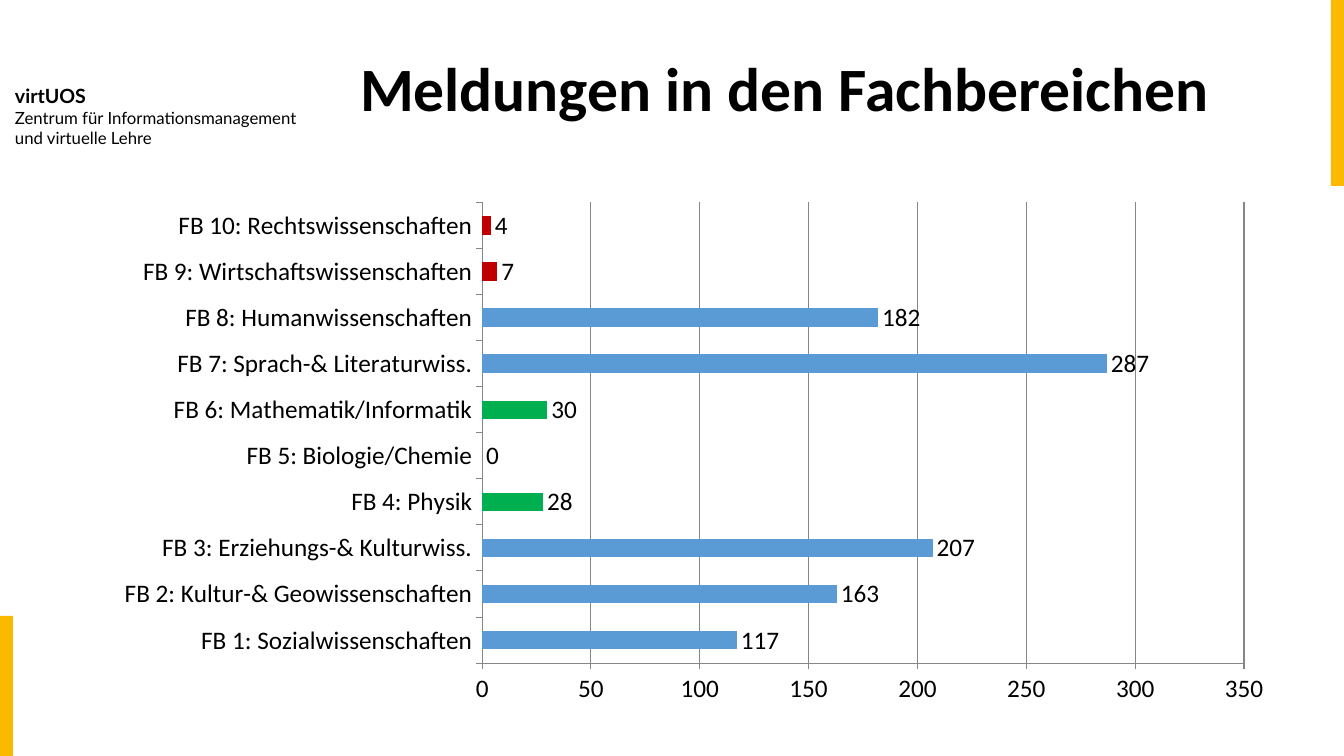
from lxml import etree
from pptx import Presentation
from pptx.chart.data import CategoryChartData
from pptx.dml.color import RGBColor
from pptx.enum.chart import XL_CHART_TYPE as ChartType
from pptx.enum.chart import XL_LABEL_POSITION as LabelPosition
from pptx.enum.chart import XL_TICK_MARK as TickMark
from pptx.enum.shapes import MSO_SHAPE as ShapeType
from pptx.enum.text import MSO_ANCHOR as Anchor
from pptx.enum.text import PP_ALIGN as Align
from pptx.util import Pt

EMU_PER_PX = 914400 / 100.8
COLORS = {
    "accent": "FBB900",
    "text": "000000",
    "bar": "5B9BD5",
    "science": "00B050",
    "low": "C00000",
    "grid": "868686",
}
REPORTS = [
    ("FB 1: Sozialwissenschaften", 117, "bar"),
    ("FB 2: Kultur-& Geowissenschaften", 163, "bar"),
    ("FB 3: Erziehungs-& Kulturwiss.", 207, "bar"),
    ("FB 4: Physik", 28, "science"),
    ("FB 5: Biologie/Chemie", 0, "bar"),
    ("FB 6: Mathematik/Informatik", 30, "science"),
    ("FB 7: Sprach-& Literaturwiss.", 287, "bar"),
    ("FB 8: Humanwissenschaften", 182, "bar"),
    ("FB 9: Wirtschaftswissenschaften", 7, "low"),
    ("FB 10: Rechtswissenschaften", 4, "low"),
]


def px(*lengths):
    return [round(length * EMU_PER_PX) for length in lengths]


def color(name):
    return RGBColor.from_string(COLORS[name])


class SlideBuilder:
    def __init__(self, slide, heading_font, brand_font):
        self.slide = slide
        self.heading_font = heading_font
        self.brand_font = brand_font

    def style(self, font, name, size, bold=False):
        font.name = name
        font.size = Pt(size)
        font.bold = bold
        font.color.rgb = color("text")

    def accent_bar(self, *box):
        shape = self.slide.shapes.add_shape(ShapeType.RECTANGLE, *px(*box))
        shape.shadow.inherit = False
        shape.fill.solid()
        shape.fill.fore_color.rgb = color("accent")
        shape.line.fill.background()

    def department(self, lines, *box):
        frame = self.slide.shapes.add_textbox(*px(*box)).text_frame
        frame.word_wrap = True
        paragraph = frame.paragraphs[0]
        for index, (text, size, bold) in enumerate(lines):
            if index:
                paragraph.add_line_break()
            run = paragraph.add_run()
            run.text = text
            self.style(run.font, self.brand_font, size, bold)

    def title(self, text, *box):
        shape = self.slide.shapes.title
        shape.left, shape.top, shape.width, shape.height = px(*box)
        frame = shape.text_frame
        frame.word_wrap = True
        frame.vertical_anchor = Anchor.MIDDLE
        paragraph = frame.paragraphs[0]
        paragraph.alignment = Align.LEFT
        paragraph.line_spacing = 0.9
        run = paragraph.add_run()
        run.text = text
        self.style(run.font, self.heading_font, 44, True)

    def bar_chart(self, rows, *box):
        data = CategoryChartData(number_format="0")
        data.categories = [label for label, _, _ in rows]
        data.add_series("Series 1", [value for _, value, _ in rows])
        chart = self.slide.shapes.add_chart(
            ChartType.BAR_CLUSTERED, *px(*box), data
        ).chart
        chart.has_legend = False
        chart.has_title = False
        self.style(chart.font, self.heading_font, 18)

        for axis in (chart.category_axis, chart.value_axis):
            axis.major_tick_mark = TickMark.OUTSIDE
            axis.minor_tick_mark = TickMark.NONE
            axis.format.line.color.rgb = color("grid")
            axis.format.line.width = Pt(0.75)
            self.style(axis.tick_labels.font, self.heading_font, 18)
        value_axis = chart.value_axis
        value_axis.minimum_scale = 0
        value_axis.maximum_scale = 350
        value_axis.major_unit = 50
        value_axis.tick_labels.number_format = "0"
        value_axis.tick_labels.number_format_is_linked = False
        value_axis.has_major_gridlines = True
        gridline = value_axis.major_gridlines.format.line
        gridline.color.rgb = color("grid")
        gridline.width = Pt(0.75)

        plot = chart.plots[0]
        plot.gap_width = 150
        plot.vary_by_categories = False
        series = plot.series[0]
        series.format.fill.solid()
        series.format.fill.fore_color.rgb = color("bar")
        for index, (_, _, group) in enumerate(rows):
            if group != "bar":
                fill = series.points[index].format.fill
                fill.solid()
                fill.fore_color.rgb = color(group)
        labels = series.data_labels
        labels.show_value = True
        labels.number_format = "0"
        labels.number_format_is_linked = False
        labels.position = LabelPosition.OUTSIDE_END
        self.style(labels.font, self.heading_font, 18)


def main():
    presentation = Presentation()
    presentation.slide_width, presentation.slide_height = px(1344, 756)
    slide = presentation.slides.add_slide(presentation.slide_layouts[5])
    builder = SlideBuilder(slide, "Calibri", "Lato")
    builder.accent_bar(1331, -1, 14, 187)
    builder.accent_bar(-1, 616, 14, 140)
    builder.department(
        [
            ("virtUOS", 14, True),
            ("Zentrum für Informationsmanagement", 12, False),
            ("und virtuelle Lehre", 12, False),
        ],
        5, 79, 345, 75,
    )
    builder.title("Meldungen in den Fachbereichen", 350, 19, 948, 146)
    builder.bar_chart(REPORTS, 101, 192, 1186, 522)
    presentation.save("out.pptx")


if __name__ == "__main__":
    main()
